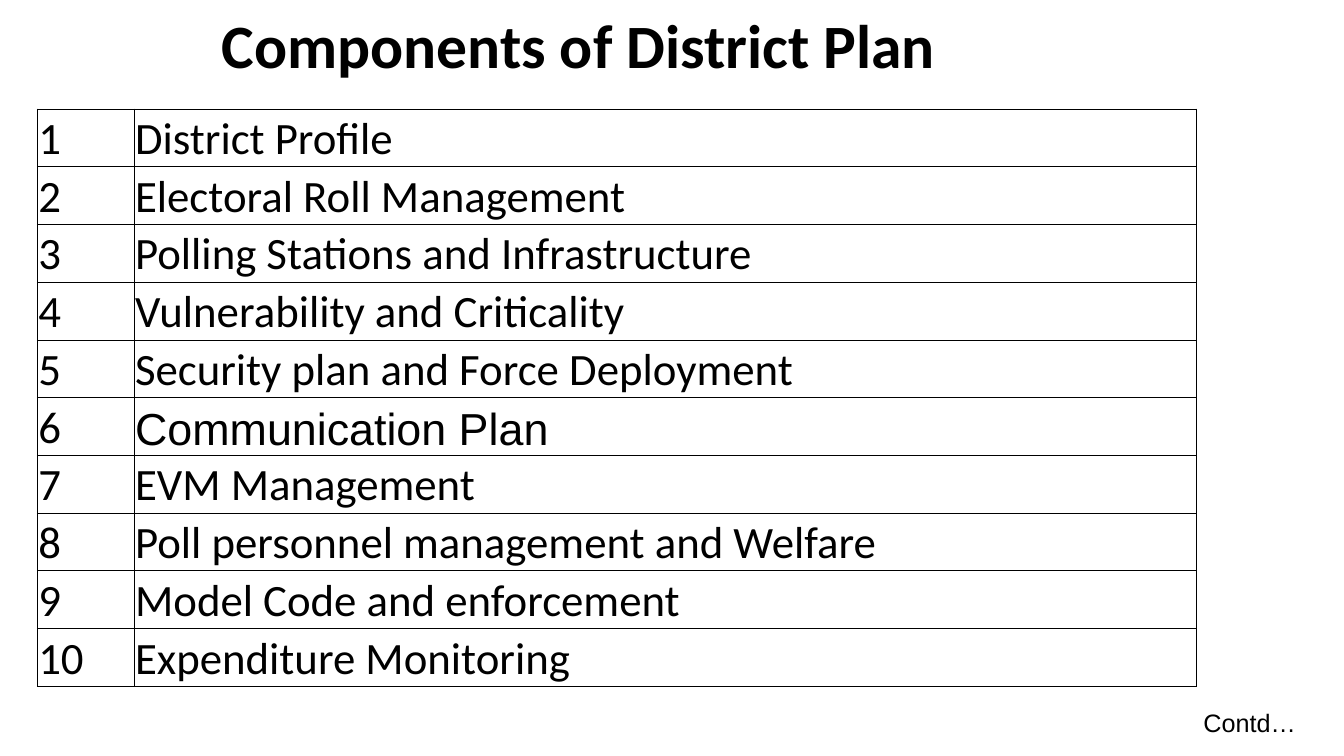
from dataclasses import dataclass

from lxml import etree
from pptx import Presentation
from pptx.dml.color import RGBColor
from pptx.enum.text import MSO_ANCHOR, MSO_AUTO_SIZE, PP_ALIGN
from pptx.oxml.ns import qn
from pptx.util import Inches, Pt

BLACK = RGBColor(0x00, 0x00, 0x00)
WHITE = RGBColor(0xFF, 0xFF, 0xFF)
LEFT, CENTER = PP_ALIGN.LEFT, PP_ALIGN.CENTER
MIDDLE, BOTTOM = MSO_ANCHOR.MIDDLE, MSO_ANCHOR.BOTTOM
NO_AUTOFIT, GROW = MSO_AUTO_SIZE.NONE, MSO_AUTO_SIZE.SHAPE_TO_FIT_TEXT

COLUMN_WIDTHS = (0.96, 10.54)
ROW_HEIGHT = 0.573
BORDER_WIDTH = Pt(0.5)


@dataclass
class Component:
    name: str
    font: str = "Calibri"


COMPONENTS = [
    Component("District Profile"),
    Component("Electoral Roll Management"),
    Component("Polling Stations and Infrastructure"),
    Component("Vulnerability and Criticality"),
    Component("Security plan and Force Deployment"),
    Component("Communication Plan", font="Arial"),
    Component("EVM Management"),
    Component("Poll personnel management and Welfare"),
    Component("Model Code and enforcement"),
    Component("Expenditure Monitoring"),
]


def write_text(tf, text: str, *, size: float, font: str = "Calibri",
               bold: bool = False, align=LEFT, spacing: float = 1.0) -> None:
    p = tf.paragraphs[0]
    p.alignment = align
    p.line_spacing = spacing
    r = p.add_run()
    r.text = text
    r.font.size = Pt(size)
    r.font.name = font
    r.font.bold = bold
    r.font.color.rgb = BLACK


def add_borders(cell) -> None:
    tc_pr = cell._tc.get_or_add_tcPr()
    for i, side in enumerate(("a:lnL", "a:lnR", "a:lnT", "a:lnB")):
        ln = etree.Element(qn(side), w=str(BORDER_WIDTH))
        fill = etree.SubElement(ln, qn("a:solidFill"))
        etree.SubElement(fill, qn("a:srgbClr"), val=str(BLACK))
        tc_pr.insert(i, ln)


def fill_cell(cell, text: str, font: str = "Calibri") -> None:
    cell.margin_left = cell.margin_right = cell.margin_top = Inches(0.01)
    cell.margin_bottom = 0
    cell.vertical_anchor = BOTTOM
    cell.fill.solid()
    cell.fill.fore_color.rgb = WHITE
    add_borders(cell)
    write_text(cell.text_frame, text, size=32, font=font)


def add_title(s) -> None:
    sp = s.shapes.title
    sp.left, sp.top = Inches(2.1), Inches(0.04)
    sp.width, sp.height = Inches(9), Inches(0.88)
    tf = sp.text_frame
    tf.auto_size = NO_AUTOFIT
    tf.vertical_anchor = MIDDLE
    write_text(tf, "Components of District Plan", size=44, bold=True, spacing=0.9)


def add_component_table(s) -> None:
    rows = len(COMPONENTS)
    table = s.shapes.add_table(
        rows, len(COLUMN_WIDTHS), Inches(0.37), Inches(1.08),
        Inches(sum(COLUMN_WIDTHS)), Inches(rows * ROW_HEIGHT)).table
    table.first_row = table.horz_banding = False
    for column, width in zip(table.columns, COLUMN_WIDTHS):
        column.width = Inches(width)
    for i, component in enumerate(COMPONENTS):
        table.rows[i].height = Inches(ROW_HEIGHT)
        fill_cell(table.cell(i, 0), str(i + 1))
        fill_cell(table.cell(i, 1), component.name, component.font)


def add_continuation(s) -> None:
    sp = s.shapes.add_textbox(Inches(11.83), Inches(6.97), Inches(1.13), Inches(0.4))
    tf = sp.text_frame
    tf.word_wrap = False
    tf.auto_size = GROW
    write_text(tf, "Contd…", size=18, font="Arial", align=CENTER)


def main() -> None:
    prs = Presentation()
    prs.slide_width, prs.slide_height = Inches(13.33), Inches(7.5)
    s = prs.slides.add_slide(prs.slide_layouts[5])

    # Heading, numbered table and continuation mark
    add_title(s)
    add_component_table(s)
    add_continuation(s)

    prs.save("out.pptx")


if __name__ == "__main__":
    main()
